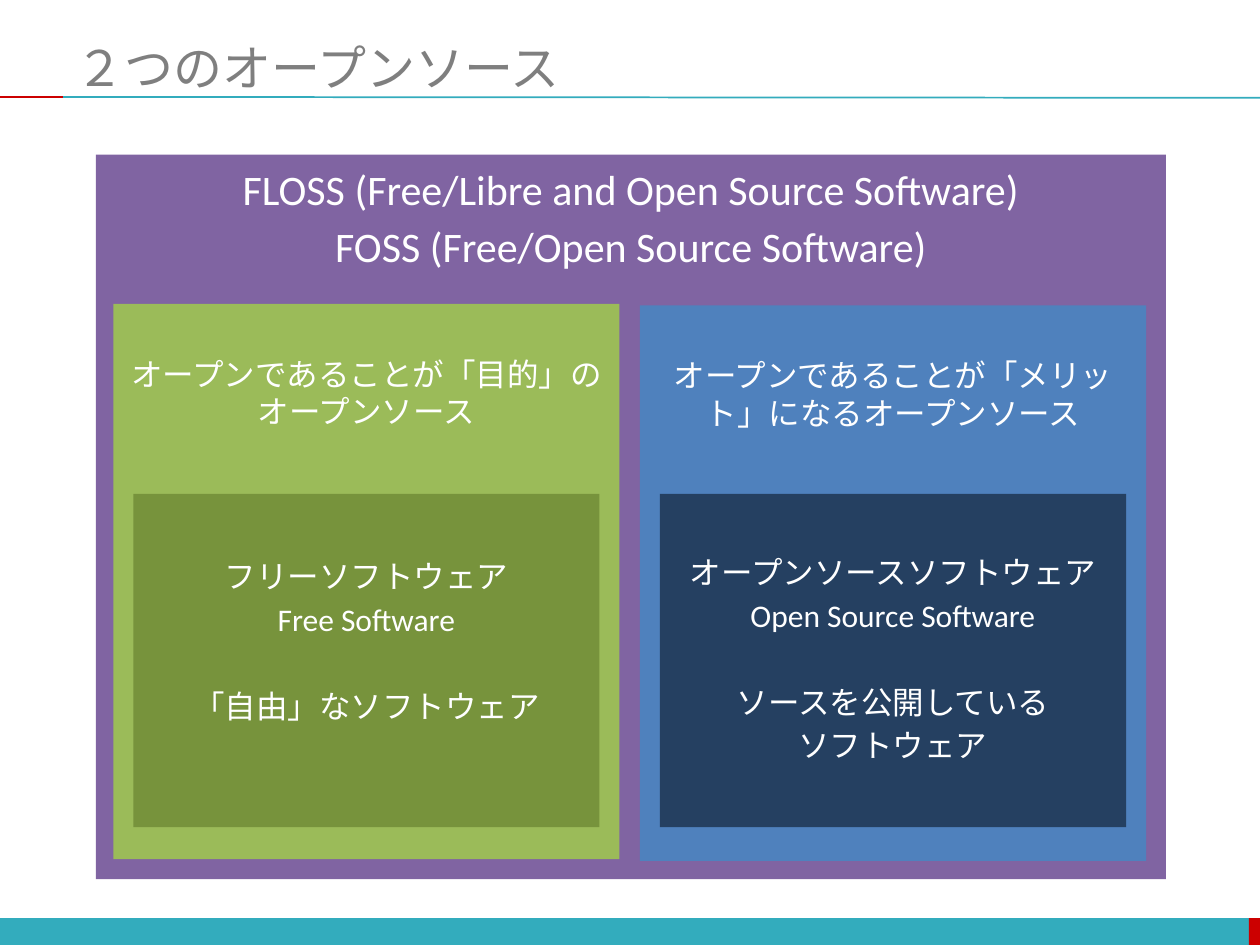
from dataclasses import dataclass

from lxml import etree
from pptx import Presentation
from pptx.dml.color import RGBColor
from pptx.enum import shapes, text
from pptx.oxml.ns import qn
from pptx.util import Pt

COLORS = {
    "teal": "33ACBD", "red": "CC0000", "gray": "7F7F7F", "white": "FFFFFF",
    "purple": "8064A2", "green": "9BBB59", "blue": "4F81BD",
    "dark_green": "77933C", "navy": "254061",
}


def rgb(name):
    return RGBColor.from_string(COLORS[name])


@dataclass
class Deck:
    slide: object
    title_font: str = "Arial"
    body_font: str = "Calibri"

    def style(self, p, font, size, color):
        for r in p.runs:
            r.font.name = font
            r.font.size = Pt(size)
            r.font.color.rgb = rgb(color)

    def title(self, words, x, y, w, h):
        sp = self.slide.shapes.title
        sp.left, sp.top, sp.width, sp.height = Pt(x), Pt(y), Pt(w), Pt(h)
        tf = sp.text_frame
        tf.text = words
        tf.vertical_anchor = text.MSO_ANCHOR.MIDDLE
        tf.auto_size = text.MSO_AUTO_SIZE.NONE
        tf.paragraphs[0].alignment = text.PP_ALIGN.LEFT
        self.style(tf.paragraphs[0], self.title_font, 28, "gray")

    def shape(self, kind, x, y, w, h, color):
        sp = self.slide.shapes.add_shape(kind, Pt(x), Pt(y), Pt(w), Pt(h))
        sp.shadow.inherit = False
        sp.fill.solid()
        sp.fill.fore_color.rgb = rgb(color)
        sp.line.fill.background()
        return sp

    def bar(self, x, y, w, h, color):
        self.shape(shapes.MSO_SHAPE.RECTANGLE, x, y, w, h, color)

    def line(self, x1, y1, x2, y2, color):
        s = self.slide.shapes.add_connector(
            shapes.MSO_CONNECTOR.STRAIGHT, Pt(x1), Pt(y1), Pt(x2), Pt(y2))
        s.line.color.rgb = rgb(color)
        s.line.width = Pt(1)
        etree.SubElement(s._element.spPr, qn("a:effectLst"))

    def panel(self, x, y, w, h, color, size, inset, lines):
        """Square-cornered box; lines are (words, space before) pairs."""
        sp = self.shape(shapes.MSO_SHAPE.ROUNDED_RECTANGLE, x, y, w, h, color)
        sp.adjustments[0] = 0
        tf = sp.text_frame
        tf.word_wrap = True
        tf.vertical_anchor = text.MSO_ANCHOR.TOP
        tf.margin_top = Pt(inset)
        for i, (words, before) in enumerate(lines):
            p = tf.add_paragraph() if i else tf.paragraphs[0]
            p.text = words
            p.alignment = text.PP_ALIGN.CENTER
            p.space_before = Pt(before)
            self.style(p, self.body_font, size, "white")


def main():
    prs = Presentation()
    prs.slide_width, prs.slide_height = Pt(720), Pt(540)
    deck = Deck(prs.slides.add_slide(prs.slide_layouts[5]))

    deck.bar(0, 524.7, 720, 15.6, "teal")
    deck.bar(713.7, 524.7, 6.8, 15.6, "red")
    deck.line(36, 55.4, 720, 55.9, "teal")
    deck.line(0, 55.4, 36, 55.4, "red")
    deck.title("２つのオープンソース", 36, 21.6, 684, 33.4)

    deck.panel(54.8, 88.4, 611.4, 414, "purple", 24, 5, [
        ("FLOSS (Free/Libre and Open Source Software)", 0),
        ("FOSS (Free/Open Source Software)", 4),
    ])

    columns = [
        (64.8, 173.6, "green", "オープンであることが「目的」のオープンソース",
         "dark_green", 36, [
             ("フリーソフトウェア", 0),
             ("Free Software", 3),
             ("「自由」なソフトウェア", 28),
         ]),
        (365.7, 174.5, "blue", "オープンであることが「メリット」になるオープンソース",
         "navy", 34, [
             ("オープンソースソフトウェア", 0),
             ("Open Source Software", 3),
             ("ソースを公開している", 28),
             ("ソフトウェア", 3),
         ]),
    ]
    for x, y, color, heading, inner_color, inset, lines in columns:
        deck.panel(x, y, 289.2, 317.4, color, 18, 29, [(heading, 0)])
        deck.panel(x + 11.4, 282.2, 266.4, 190.4, inner_color, 18, inset, lines)

    prs.save("out.pptx")


if __name__ == "__main__":
    main()
